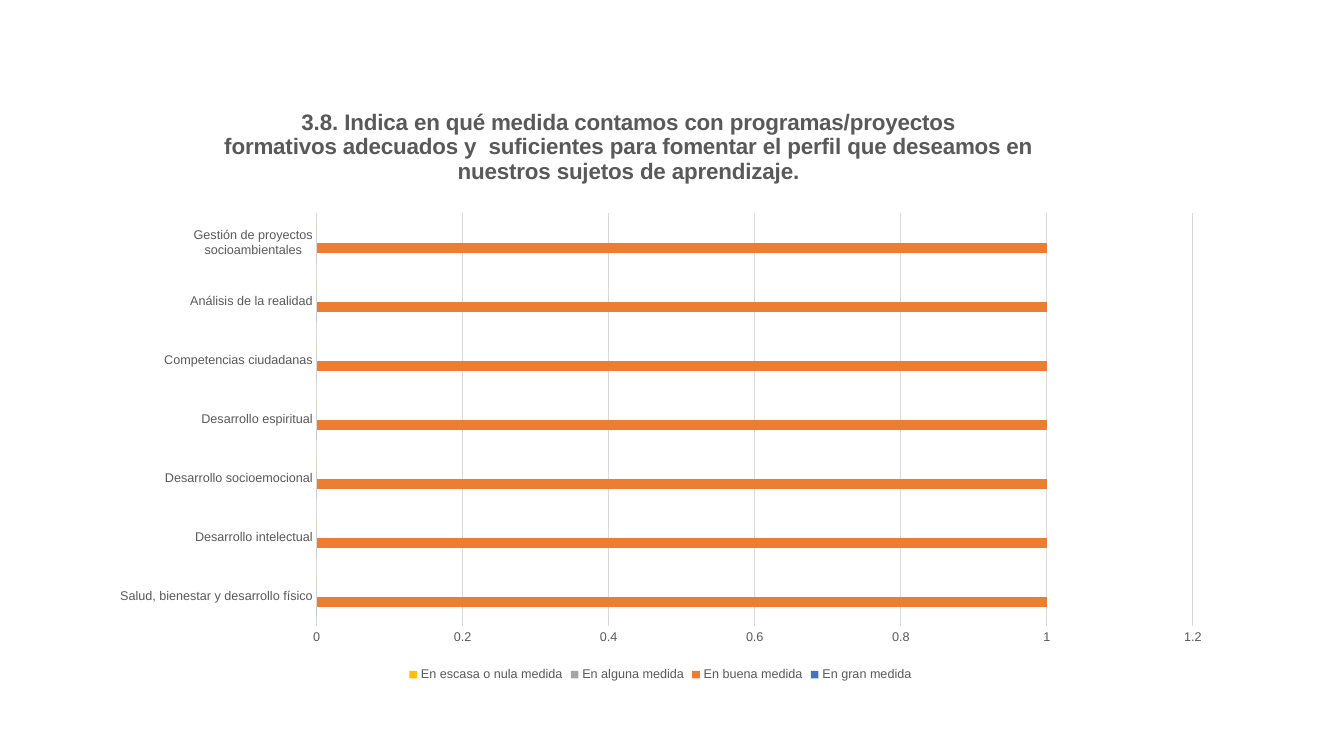
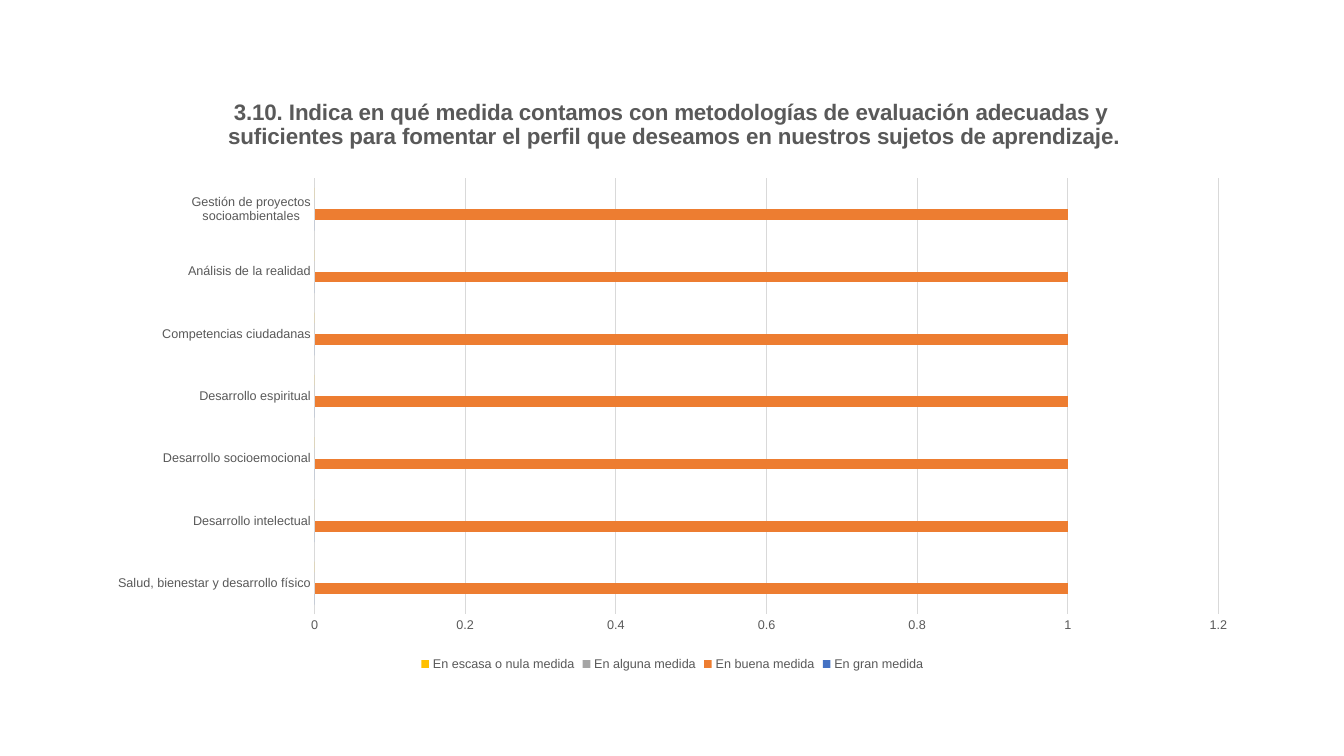
import pptx
import pptx.chart.data
import pptx.dml.color
import pptx.enum.chart
import pptx.enum.text
import pptx.oxml
import pptx.oxml.ns
import pptx.util
from pptx.util import Cm

COLORS = {
    "text": "595959",
    "grid": "D9D9D9",
    "blue": "4472C4",
    "orange": "ED7D31",
    "gray": "A5A5A5",
    "yellow": "FFC000",
}
FONT = "Arial"
NBSP = chr(160)  # keeps neighbouring words on one line

CATEGORIES = [
    "Salud, bienestar y desarrollo físico",
    "Desarrollo intelectual",
    "Desarrollo socioemocional",
    "Desarrollo espiritual",
    "Competencias ciudadanas",
    "Análisis de la realidad",
    "Gestión de proyectos socioambientales",
]
# Series name, colour, value given to every category
SERIES = [
    ("En gran medida", "blue", 0),
    ("En buena medida", "orange", 1),
    ("En alguna medida", "gray", 0),
    ("En escasa o nula medida", "yellow", 0),
]

# Boxes are left, top, width, height on the slide, in cm
SLIDES = [
    {
        "title": f"3.8. Indica en qué medida contamos con{NBSP}programas/proyectos "
                 f"formativos{NBSP}adecuados y{NBSP} suficientes para fomentar el perfil "
                 "que deseamos en nuestros sujetos de aprendizaje.",
        "chart_box": (2.46, 2.46, 28.37, 14.83),
        "title_at": (5.55, 2.62),
        "plot_box": (7.98, 5.37, 22.08, 10.41),
    },
    {
        "title": f"3.10. Indica en qué medida contamos con{NBSP}metodologías de "
                 f"evaluación{NBSP}adecuadas y{NBSP} suficientes para fomentar el perfil "
                 "que deseamos en nuestros sujetos de aprendizaje.",
        "chart_box": (2.39, 2.21, 29.11, 14.81),
        "title_at": (5.65, 2.37),
        "plot_box": (7.93, 4.49, 22.78, 10.99),
    },
]


def rgb(name):
    return pptx.dml.color.RGBColor.from_string(COLORS[name])


def set_font(font, size=9, bold=False, color="text"):
    font.name = FONT
    font.size = pptx.util.Pt(size)
    font.bold = bold
    font.color.rgb = rgb(color)


def write_text(tf, text, align=pptx.enum.text.PP_ALIGN.CENTER, **font_format):
    p = tf.paragraphs[0]
    p.alignment = align
    r = p.add_run()
    r.text = text
    set_font(r.font, **font_format)


def set_line(line, color="grid"):
    line.color.rgb = rgb(color)
    line.width = pptx.util.Pt(0.75)


def place(element, box, chart_box, inner=False):
    """Put a chart part at a place on the slide, as shares of the chart area."""
    left, top, width, height = chart_box
    shares = [(box[0] - left) / width, (box[1] - top) / height]
    if len(box) == 4:
        shares += [box[2] / width, box[3] / height]
    target = '<c:layoutTarget val="inner"/>' if inner else ""
    modes = '<c:xMode val="edge"/><c:yMode val="edge"/>'
    values = "".join(f'<c:{tag} val="{share:.4f}"/>' for tag, share in zip("xywh", shares))
    layout = pptx.oxml.parse_xml(
        f'<c:layout {pptx.oxml.ns.nsdecls("c")}><c:manualLayout>'
        f"{target}{modes}{values}</c:manualLayout></c:layout>"
    )
    for old in element.xpath("c:layout"):
        element.remove(old)
    element.insert(len(element.xpath("c:tx")), layout)


def format_axis(axis):
    axis.major_tick_mark = pptx.enum.chart.XL_TICK_MARK.NONE
    axis.minor_tick_mark = pptx.enum.chart.XL_TICK_MARK.NONE
    set_font(axis.tick_labels.font)


def add_bar_chart(slide, title, chart_box, title_at, plot_box):
    data = pptx.chart.data.CategoryChartData()
    data.categories = CATEGORIES
    for name, _, value in SERIES:
        data.add_series(name, [value] * len(CATEGORIES))
    chart = slide.shapes.add_chart(
        pptx.enum.chart.XL_CHART_TYPE.BAR_CLUSTERED, *map(Cm, chart_box), data
    ).chart
    set_font(chart.font, size=10)

    # Title
    chart.has_title = True
    write_text(chart.chart_title.text_frame, title, size=16, bold=True)
    place(chart.element.xpath("c:chart/c:title")[0], title_at, chart_box)

    # Bars
    plot = chart.plots[0]
    plot.gap_width = 182
    plot.vary_by_categories = False
    for series, (_, color, _) in zip(plot.series, SERIES):
        series.format.fill.solid()
        series.format.fill.fore_color.rgb = rgb(color)
    place(chart.element.xpath("c:chart/c:plotArea")[0], plot_box, chart_box, inner=True)

    # Axes
    format_axis(chart.category_axis)
    set_line(chart.category_axis.format.line)
    chart.category_axis.has_major_gridlines = False
    value_axis = chart.value_axis
    format_axis(value_axis)
    value_axis.format.line.fill.background()
    value_axis.minimum_scale, value_axis.maximum_scale = 0, 1.2
    value_axis.major_unit = 0.2
    value_axis.has_major_gridlines = True
    set_line(value_axis.major_gridlines.format.line)

    # Legend
    chart.has_legend = True
    chart.legend.position = pptx.enum.chart.XL_LEGEND_POSITION.BOTTOM
    chart.legend.include_in_layout = False
    set_font(chart.legend.font)


def main():
    prs = pptx.Presentation()
    prs.slide_width, prs.slide_height = Cm(33.87), Cm(19.05)
    blank = prs.slide_layouts.get_by_name("Blank")
    for content in SLIDES:
        add_bar_chart(prs.slides.add_slide(blank), **content)
    prs.save("out.pptx")


if __name__ == "__main__":
    main()
